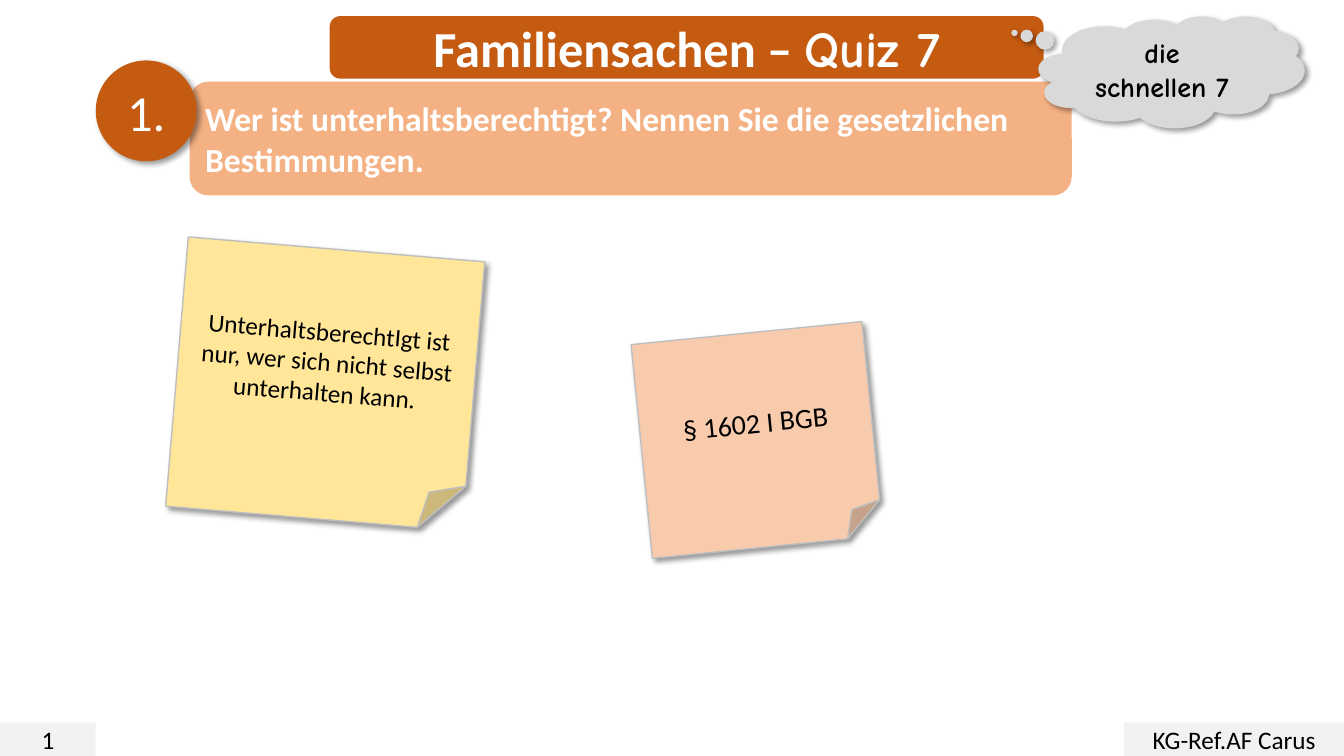
from lxml import etree
from pptx import Presentation
from pptx.dml.color import RGBColor
from pptx.enum.shapes import MSO_SHAPE as SHAPE
from pptx.enum.text import MSO_ANCHOR as ANCHOR, PP_ALIGN as ALIGN
from pptx.oxml import parse_xml
from pptx.util import Inches, Pt

WHITE = RGBColor(0xFF, 0xFF, 0xFF)
BLACK = RGBColor(0x00, 0x00, 0x00)
RUST = RGBColor(0xC5, 0x5A, 0x11)
APRICOT = RGBColor(0xF4, 0xB1, 0x83)
PEACH = RGBColor(0xF8, 0xCB, 0xAD)
YELLOW = RGBColor(0xFF, 0xE6, 0x99)
CLOUD = RGBColor(0xD9, 0xD9, 0xD9)
EDGE = RGBColor(0xBF, 0xBF, 0xBF)
FOOTER = RGBColor(0xF2, 0xF2, 0xF2)
SANS, COMIC = "Calibri", "Comic Neue"
W, H = 13.33, 7.5

SHADOW = (
    '<a:effectLst xmlns:a="http://schemas.openxmlformats.org/drawingml/2006/main">'
    '<a:outerShdw blurRad="50800" dist="38100" dir="2700000" algn="tl" rotWithShape="0">'
    '<a:srgbClr val="000000"><a:alpha val="40000"/></a:srgbClr>'
    '</a:outerShdw></a:effectLst>'
)

prs = Presentation()
prs.slide_width, prs.slide_height = Inches(W), Inches(H)
s = prs.slides.add_slide(prs.slide_layouts[6])


def add_box(kind, box, fill, runs, size, color, bold=False, align=ALIGN.CENTER):
    """Add a filled shape; runs is a list of (text, font) pairs."""
    sp = s.shapes.add_shape(kind, *map(Inches, box))
    sp.shadow.inherit = False
    sp.fill.solid()
    sp.fill.fore_color.rgb = fill
    sp.line.fill.background()
    tf = sp.text_frame
    tf.word_wrap = True
    tf.vertical_anchor = ANCHOR.MIDDLE
    p = tf.paragraphs[0]
    p.alignment = align
    for text, font in runs:
        r = p.add_run()
        r.text = text
        r.font.name, r.font.size, r.font.bold = font, Pt(size), bold
        r.font.color.rgb = color
    return sp


def add_shadow(sp):
    """Replace the empty effect list with a soft shadow to the lower right."""
    sp_pr = sp.element.spPr
    sp_pr.replace(sp_pr.find("{*}effectLst"), parse_xml(SHADOW))


# Title bar
add_box(SHAPE.ROUNDED_RECTANGLE, (3.27, 0.16, 7.08, 0.62), RUST,
        [("Familiensachen – ", SANS), ("Quiz 7", COMIC)], 36, WHITE, True)

# Footer: page number on the left, author on the right
FOOT_H = 0.33
for left, width, text in [(0, 0.95, "1"), (W - 2.18, 2.18, "KG-Ref.AF Carus")]:
    add_box(SHAPE.RECTANGLE, (left, H - FOOT_H, width, FOOT_H), FOOTER,
            [(text, SANS)], 18, BLACK)

# Question with its number
add_box(SHAPE.ROUNDED_RECTANGLE, (1.88, 0.81, 8.75, 1.13), APRICOT,
        [("Wer ist unterhaltsberechtigt? Nennen Sie die gesetzlichen Bestimmungen.", SANS)],
        24, WHITE, True, ALIGN.LEFT)
number = add_box(SHAPE.OVAL, (0.95, 0.6, 1, 1), RUST, [("1.", SANS)], 36, WHITE)
add_shadow(number)

# Thought cloud
cloud = add_box(SHAPE.CLOUD_CALLOUT, (10.3, 0.16, 2.64, 1.11), CLOUD,
                [("die schnellen 7", COMIC)], 20, BLACK, True)
cloud.adjustments[0], cloud.adjustments[1] = -0.59, -0.35
add_shadow(cloud)

# Sticky notes with the answers
notes = [
    ((1.75, 2.47, 2.95, 2.68), 4.8, YELLOW, 18,
     "UnterhaltsberechtIgt ist nur, wer sich nicht selbst unterhalten kann."),
    ((6.36, 3.3, 2.3, 2.13), -5.7, PEACH, 20, "§ 1602 I BGB"),
]
for box, angle, fill, size, text in notes:
    note = add_box(SHAPE.FOLDED_CORNER, box, fill, [(text, SANS)], size, BLACK)
    note.rotation = angle
    note.line.color.rgb = EDGE
    note.line.width = Pt(1)
    add_shadow(note)

prs.save("out.pptx")
